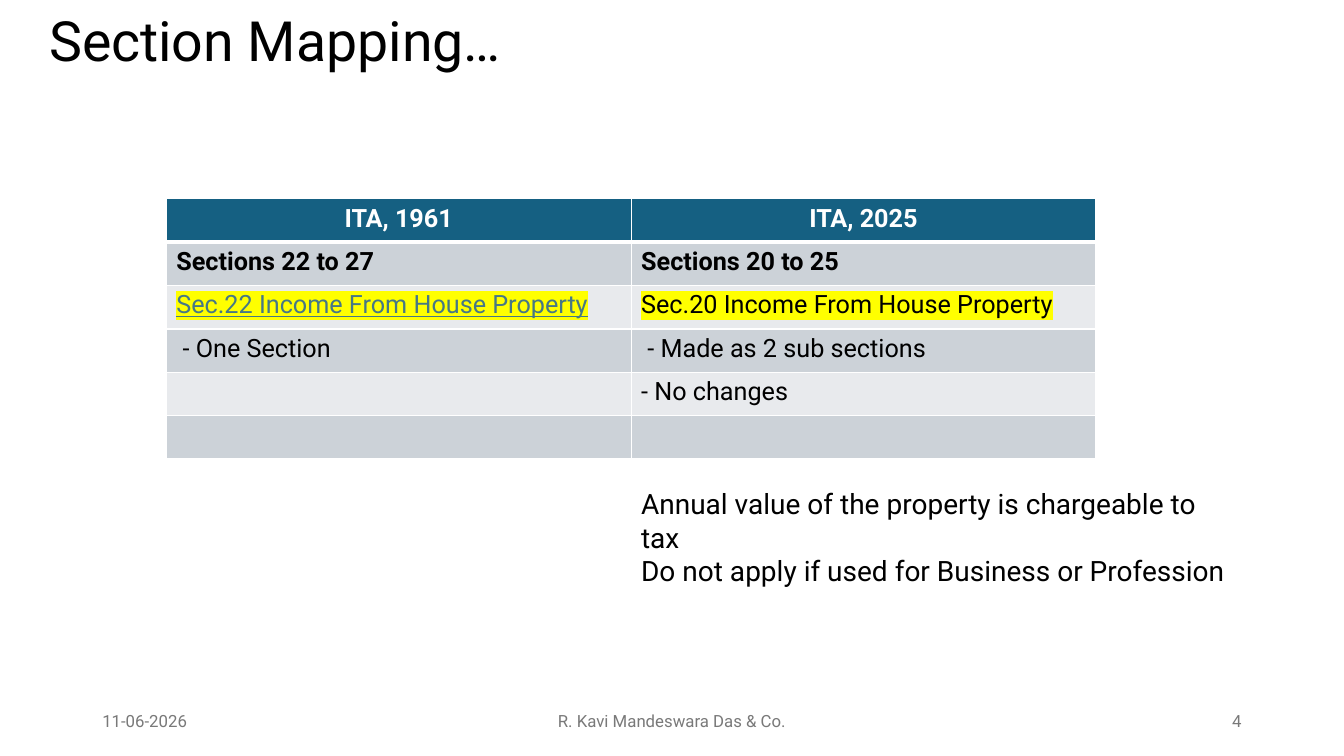
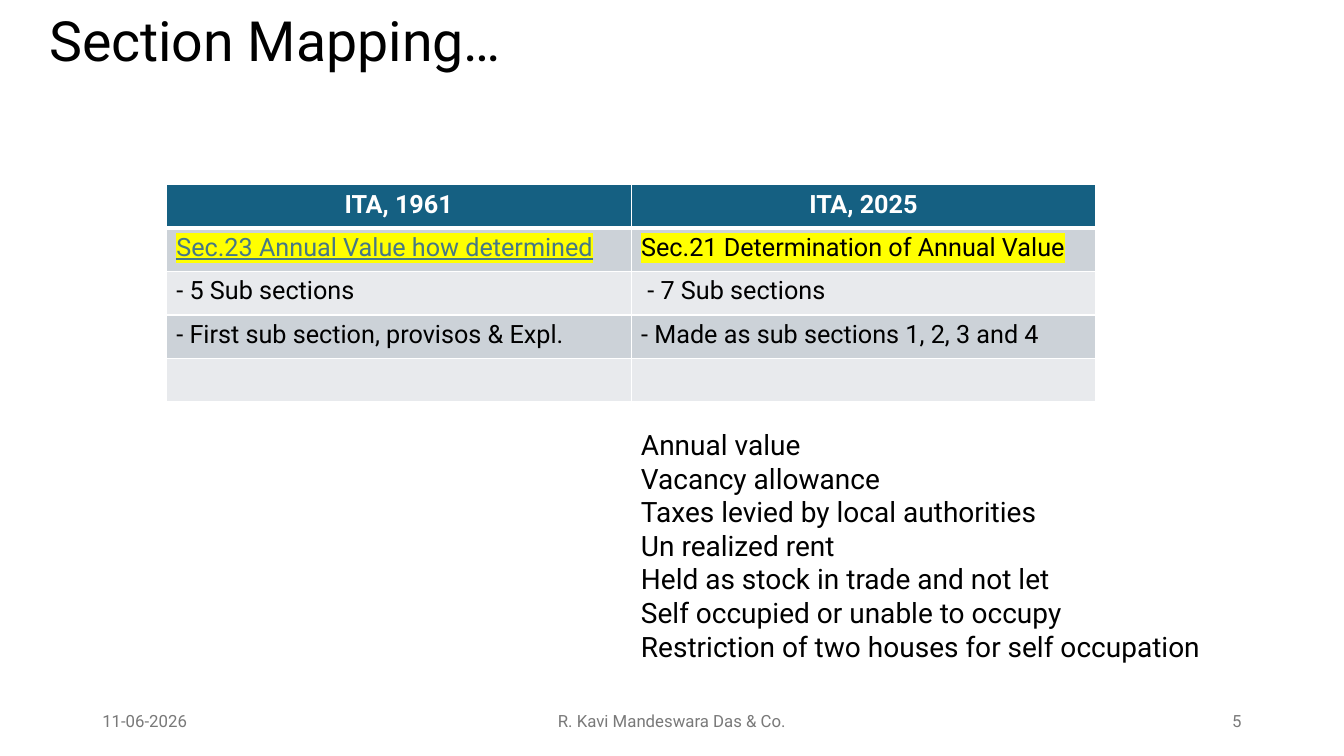
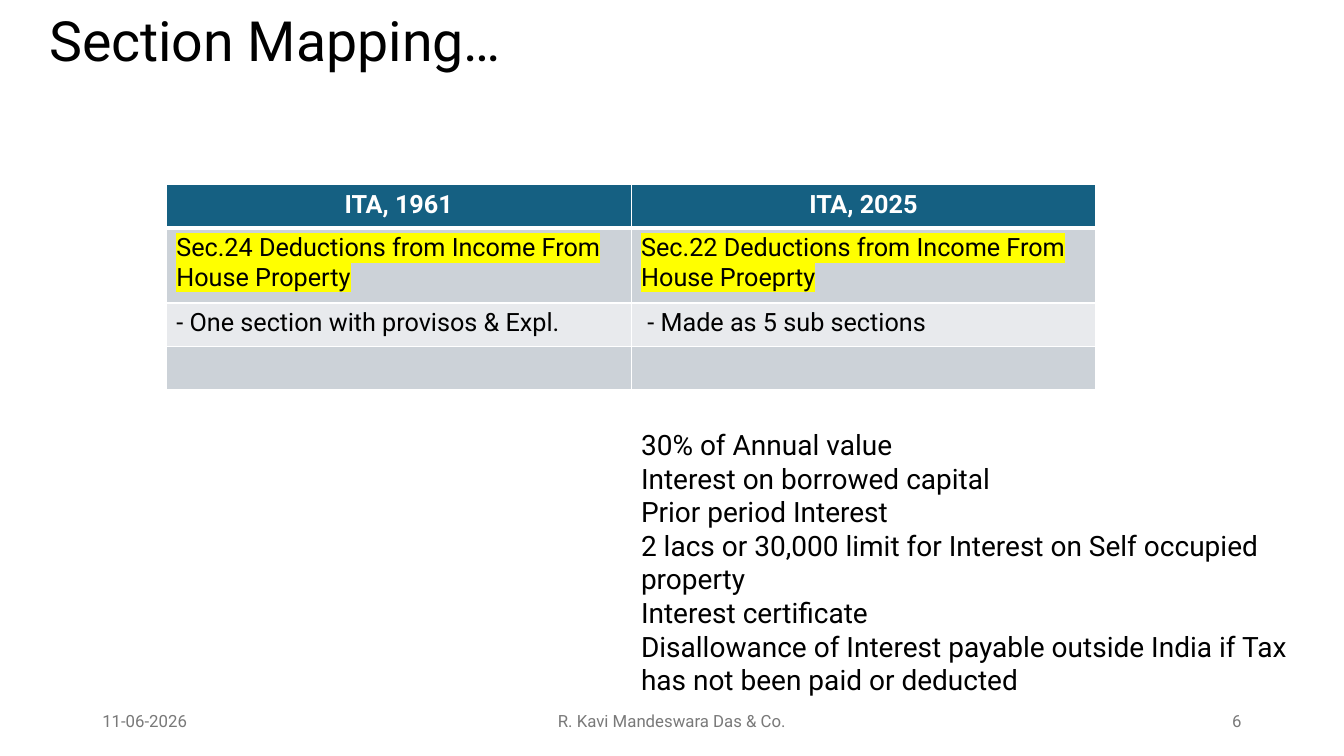
from dataclasses import dataclass

from lxml import etree
from pptx import Presentation
from pptx.dml.color import RGBColor
from pptx.enum.text import MSO_ANCHOR, MSO_AUTO_SIZE, PP_ALIGN
from pptx.oxml.ns import qn
from pptx.util import Pt

LEFT, CENTER, RIGHT = PP_ALIGN.LEFT, PP_ALIGN.CENTER, PP_ALIGN.RIGHT
TOP, MIDDLE = MSO_ANCHOR.TOP, MSO_ANCHOR.MIDDLE
GROW = MSO_AUTO_SIZE.SHAPE_TO_FIT_TEXT
BLANK_LAYOUT = 6


@dataclass(frozen=True)
class Theme:
    font: str = "Roboto"
    ink: str = "000000"
    white: str = "FFFFFF"
    muted: str = "797979"
    header: str = "156082"
    bands: tuple = ("CCD2D8", "E8EAED")
    link: str = "467886"
    marker: str = "FFFF00"
    title_size: float = 39.6
    body_size: float = 20
    table_size: float = 18
    footer_size: float = 12


THEME = Theme()

SLIDE_WIDTH, SLIDE_HEIGHT = 960, 540
TABLE_LEFT, COLUMN_WIDTH = 118.8, 332
ROW_HEIGHT, TALL_ROW_HEIGHT = 31, 53.4
BODY_LEFT = 450.8
FOOTER_TOP, FOOTER_HEIGHT = 500.4, 28.8

TITLE = "Section Mapping…"
HEADINGS = ("ITA, 1961", "ITA, 2025")
DATE = "11-06-2026"
FIRM = "R. Kavi Mandeswara Das & Co."
FIRST_PAGE_NUMBER = 4


@dataclass(frozen=True)
class Entry:
    """Text of one table cell with its emphasis."""
    text: str = ""
    bold: bool = False
    marked: bool = False
    linked: bool = False


@dataclass(frozen=True)
class Mapping:
    """Content of one slide: table rows and the key points under them."""
    table_top: float
    rows: tuple
    body_top: float
    body_width: float
    body_height: float
    points: tuple
    tall_rows: tuple = ()


EMPTY_ROW = (Entry(), Entry())

MAPPINGS = (
    Mapping(
        table_top=142,
        rows=(
            (Entry("Sections 22 to 27", bold=True), Entry("Sections 20 to 25", bold=True)),
            (Entry("Sec.22 Income From House Property", marked=True, linked=True),
             Entry("Sec.20 Income From House Property", marked=True)),
            (Entry(" - One Section"), Entry(" - Made as 2 sub sections")),
            (Entry(), Entry("- No changes")),
            EMPTY_ROW,
        ),
        body_top=344, body_width=434, body_height=101.6,
        points=(
            "Annual value of the property is chargeable to tax",
            "Do not apply if used for Business or Profession",
        ),
    ),
    Mapping(
        table_top=132,
        rows=(
            (Entry("Sec.23 Annual Value how determined", marked=True, linked=True),
             Entry("Sec.21 Determination of Annual Value", marked=True)),
            (Entry("- 5 Sub sections"), Entry(" - 7 Sub sections")),
            (Entry("- First sub section, provisos & Expl."),
             Entry("- Made as sub sections 1, 2, 3 and 4")),
            EMPTY_ROW,
        ),
        body_top=301.8, body_width=443, body_height=199,
        points=(
            "Annual value",
            "Vacancy allowance",
            "Taxes levied by local authorities",
            "Un realized rent",
            "Held as stock in trade and not let",
            "Self occupied or unable to occupy",
            "Restriction of two houses for self occupation",
        ),
    ),
    Mapping(
        table_top=132,
        rows=(
            (Entry("Sec.24 Deductions from Income From House Property", marked=True),
             Entry("Sec.22 Deductions from Income From House Proeprty", marked=True)),
            (Entry("- One section with provisos & Expl."), Entry(" - Made as 5 sub sections")),
            EMPTY_ROW,
        ),
        tall_rows=(1,),
        body_top=301.8, body_width=485.2, body_height=201,
        points=(
            "30% of Annual value",
            "Interest on borrowed capital",
            "Prior period Interest",
            "2 lacs or 30,000 limit for Interest on Self occupied property",
            "Interest certificate",
            "Disallowance of Interest payable outside India if Tax has not been paid or deducted",
        ),
    ),
)


def add_span(para, text, size, color, bold=False):
    span = para.add_run()
    span.text = text
    span.font.name = THEME.font
    span.font.size = Pt(size)
    span.font.bold = bold
    span.font.color.rgb = RGBColor.from_string(color)
    return span


def highlight(span):
    """Place the marker colour behind a run, before its typeface as the schema asks."""
    marker = etree.Element(qn("a:highlight"))
    etree.SubElement(marker, qn("a:srgbClr"), val=THEME.marker)
    span.font._element.find(qn("a:latin")).addprevious(marker)


def add_text(page, bounds, lines, size, color, align=LEFT, anchor=MIDDLE):
    box = page.shapes.add_textbox(*(Pt(length) for length in bounds))
    frame = box.text_frame
    frame.word_wrap = True
    frame.vertical_anchor = anchor
    for index, line in enumerate(lines):
        para = frame.add_paragraph() if index else frame.paragraphs[0]
        para.alignment = align
        add_span(para, line, size, color)
    return frame


def add_title(page):
    frame = add_text(page, (28, 6.5, 758, 49), [TITLE], THEME.title_size, THEME.ink)
    frame.paragraphs[0].line_spacing = 0.9


def add_points(page, mapping):
    bounds = (BODY_LEFT, mapping.body_top, mapping.body_width, mapping.body_height)
    frame = add_text(page, bounds, mapping.points, THEME.body_size, THEME.ink, anchor=TOP)
    frame.auto_size = GROW


def add_footer(page, number):
    parts = (
        (66, 216, DATE, LEFT),
        (318, 324, FIRM, CENTER),
        (678, 216, str(number), RIGHT),
    )
    for left, width, text, align in parts:
        add_text(page, (left, FOOTER_TOP, width, FOOTER_HEIGHT), [text],
                 THEME.footer_size, THEME.muted, align)


def style_cell(cell, fill, top_width, bottom_width):
    """Draw the borders, then the fill, in the order the schema asks."""
    properties = cell._tc.get_or_add_tcPr()
    widths = {"lnL": 1, "lnR": 1, "lnT": top_width, "lnB": bottom_width}
    for side, width in widths.items():
        line = etree.SubElement(properties, qn(f"a:{side}"), w=str(Pt(width)))
        solid = etree.SubElement(line, qn("a:solidFill"))
        etree.SubElement(solid, qn("a:srgbClr"), val=THEME.white)
    cell.fill.solid()
    cell.fill.fore_color.rgb = RGBColor.from_string(fill)


def fill_heading(cell, text):
    style_cell(cell, THEME.header, 1, 3)
    para = cell.text_frame.paragraphs[0]
    para.alignment = CENTER
    add_span(para, text, THEME.table_size, THEME.white, bold=True)


def fill_entry(cell, entry, row_index):
    style_cell(cell, THEME.bands[(row_index - 1) % 2], 3 if row_index == 1 else 1, 1)
    if not entry.text:
        return
    color = THEME.link if entry.linked else THEME.ink
    span = add_span(cell.text_frame.paragraphs[0], entry.text,
                    THEME.table_size, color, entry.bold)
    span.font.underline = entry.linked
    if entry.marked:
        highlight(span)


def add_mapping_table(page, mapping):
    row_count = len(mapping.rows) + 1
    heights = [TALL_ROW_HEIGHT if index in mapping.tall_rows else ROW_HEIGHT
               for index in range(row_count)]
    table = page.shapes.add_table(
        row_count, len(HEADINGS), Pt(TABLE_LEFT), Pt(mapping.table_top),
        Pt(COLUMN_WIDTH * len(HEADINGS)), Pt(sum(heights))).table
    for column in table.columns:
        column.width = Pt(COLUMN_WIDTH)
    for row, height in zip(table.rows, heights):
        row.height = Pt(height)
    for column_index, heading in enumerate(HEADINGS):
        fill_heading(table.cell(0, column_index), heading)
    for row_index, entries in enumerate(mapping.rows, start=1):
        for column_index, entry in enumerate(entries):
            fill_entry(table.cell(row_index, column_index), entry, row_index)


def main():
    deck = Presentation()
    deck.slide_width, deck.slide_height = Pt(SLIDE_WIDTH), Pt(SLIDE_HEIGHT)
    for number, mapping in enumerate(MAPPINGS, start=FIRST_PAGE_NUMBER):
        page = deck.slides.add_slide(deck.slide_layouts[BLANK_LAYOUT])
        add_title(page)
        add_mapping_table(page, mapping)
        add_footer(page, number)
        add_points(page, mapping)
    deck.save("out.pptx")


if __name__ == "__main__":
    main()
